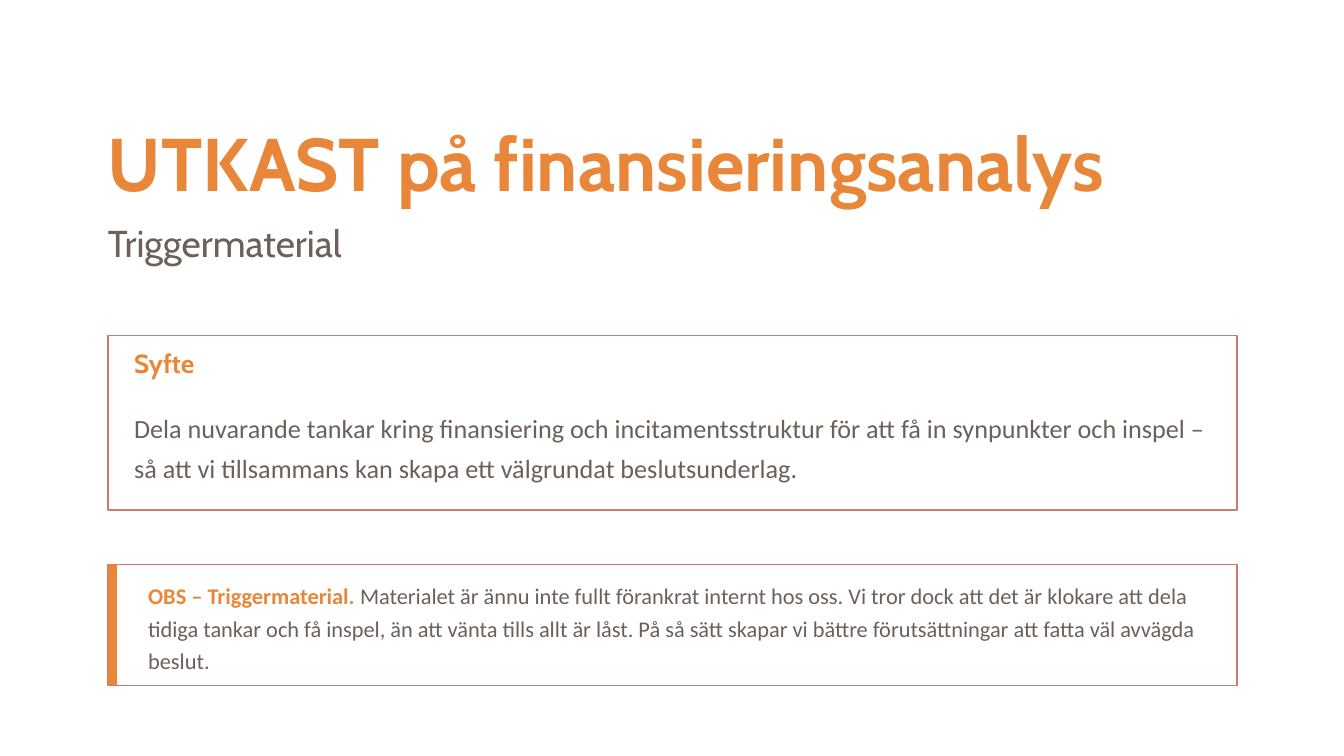
from dataclasses import dataclass
from typing import Optional

from pptx import Presentation
from pptx import util as u
from pptx.dml.color import RGBColor
from pptx.enum import shapes, text


@dataclass(frozen=True)
class Theme:
    accent: str = "E8873A"
    body: str = "6D6059"
    border: str = "CD7A6E"
    surface: str = "FFFFFF"
    heading_font: str = "Cabin"
    body_font: str = "Calibri"
    title_size: float = 53.3
    subtitle_size: float = 26.7
    purpose_size: float = 18.7
    note_size: float = 16


@dataclass(frozen=True)
class Box:
    left: float
    top: float
    width: float
    height: float

    def lengths(self) -> list:
        return [u.Inches(value) for value in (self.left, self.top, self.width, self.height)]


@dataclass(frozen=True)
class Panel:
    box: Box
    fill: str
    line: Optional[str] = None


THEME = Theme()
MARGIN, CONTENT_WIDTH = 1.07, 11.2

# Panels, from back to front
PANELS = [
    Panel(Box(MARGIN, 3.33, CONTENT_WIDTH, 1.73), THEME.surface, THEME.border),
    Panel(Box(MARGIN, 5.6, CONTENT_WIDTH, 1.2), THEME.surface, THEME.border),
    Panel(Box(MARGIN, 5.6, 0.09, 1.2), THEME.accent),
]


def add_panel(slide, panel: Panel) -> None:
    shape = slide.shapes.add_shape(shapes.MSO_SHAPE.RECTANGLE, *panel.box.lengths())
    shape.shadow.inherit = False
    shape.fill.solid()
    shape.fill.fore_color.rgb = RGBColor.from_string(panel.fill)
    if panel.line:
        shape.line.color.rgb = RGBColor.from_string(panel.line)
        shape.line.width = u.Pt(1)
    else:
        shape.line.fill.background()


def place(shape, box: Box):
    """Move a text shape and return its first paragraph, ready for runs."""
    shape.left, shape.top, shape.width, shape.height = box.lengths()
    frame = shape.text_frame
    frame.word_wrap = True
    frame.auto_size = text.MSO_AUTO_SIZE.NONE
    frame.vertical_anchor = text.MSO_ANCHOR.MIDDLE
    frame.margin_left = frame.margin_top = frame.margin_right = frame.margin_bottom = 0
    paragraph = frame.paragraphs[0]
    paragraph.alignment = text.PP_ALIGN.LEFT
    paragraph.space_before = u.Pt(0)
    return paragraph


def add_text_box(slide, box: Box):
    return place(slide.shapes.add_textbox(*box.lengths()), box)


def write(paragraph, words: str, *, size: float, color: str = THEME.body,
          font: str = THEME.body_font, bold: bool = False, spacing: float = 1.0) -> None:
    paragraph.line_spacing = spacing
    run = paragraph.add_run()
    run.text = words
    run.font.name = font
    run.font.size = u.Pt(size)
    run.font.bold = bold
    run.font.color.rgb = RGBColor.from_string(color)


def main() -> None:
    presentation = Presentation()
    presentation.slide_width = u.Inches(13.33)
    presentation.slide_height = u.Inches(7.5)
    slide = presentation.slides.add_slide(presentation.slide_layouts[0])

    # Title and subtitle
    title = place(slide.shapes.title, Box(MARGIN, 1.07, CONTENT_WIDTH, 1.07))
    write(title, "UTKAST på finansieringsanalys", size=THEME.title_size,
          color=THEME.accent, font=THEME.heading_font, bold=True)
    subtitle = place(slide.placeholders[1], Box(MARGIN, 2.07, CONTENT_WIDTH, 0.67))
    write(subtitle, "Triggermaterial", size=THEME.subtitle_size, font=THEME.heading_font)

    for panel in PANELS:
        add_panel(slide, panel)

    # Purpose
    heading = add_text_box(slide, Box(1.33, 3.4, 10.67, 0.4))
    write(heading, "Syfte", size=THEME.purpose_size, color=THEME.accent,
          font=THEME.heading_font, bold=True)
    purpose = add_text_box(slide, Box(1.33, 3.87, 10.67, 1.07))
    write(purpose, "Dela nuvarande tankar kring finansiering och incitamentsstruktur för att få in "
          "synpunkter och inspel – så att vi tillsammans kan skapa ett välgrundat beslutsunderlag.",
          size=THEME.purpose_size, spacing=1.25)

    # Note
    note = add_text_box(slide, Box(1.47, 5.67, 10.53, 1.07))
    write(note, "OBS – Triggermaterial. ", size=THEME.note_size, color=THEME.accent,
          bold=True, spacing=1.2)
    write(note, "Materialet är ännu inte fullt förankrat internt hos oss. Vi tror dock att det är "
          "klokare att dela tidiga tankar och få inspel, än att vänta tills allt är låst. På så sätt "
          "skapar vi bättre förutsättningar att fatta väl avvägda beslut.",
          size=THEME.note_size, spacing=1.2)

    presentation.save("out.pptx")


if __name__ == "__main__":
    main()
